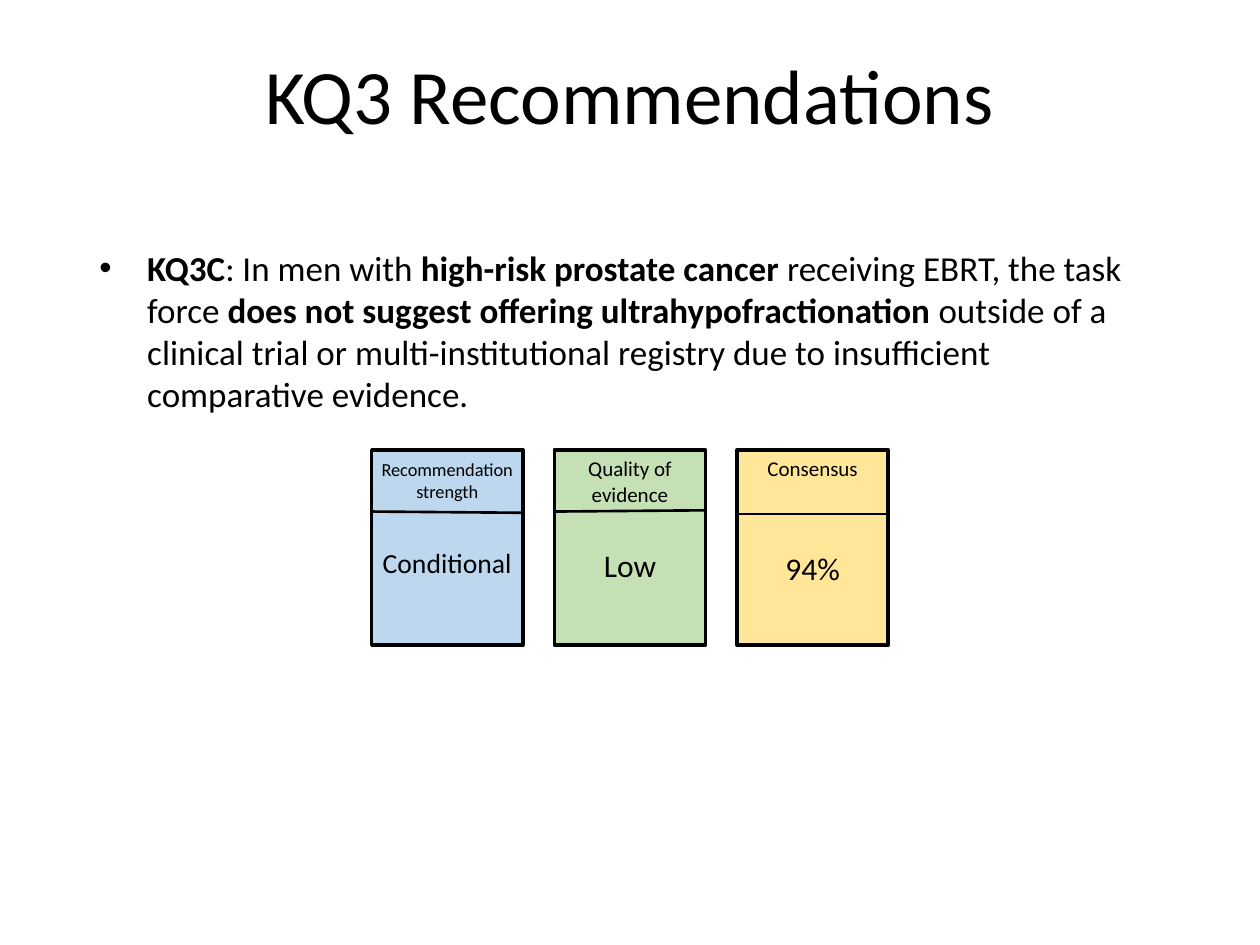
"""Build the KQ3 recommendations slide with its three rating cards."""
import pptx
import pptx.dml.color
import pptx.enum.shapes
import pptx.enum.text
import pptx.oxml.ns
import pptx.util
from lxml import etree

Inches = pptx.util.Inches
Pt = pptx.util.Pt
qn = pptx.oxml.ns.qn
CENTER = pptx.enum.text.PP_ALIGN.CENTER
LEFT = pptx.enum.text.PP_ALIGN.LEFT
COLORS = {"text": "000000", "strength": "BDD7EE", "quality": "C5E0B4", "consensus": "FFE699"}


def rgb(name):
    return pptx.dml.color.RGBColor.from_string(COLORS[name])


def add_text(s, box, runs, size, align=CENTER, insets=(0.1, 0.05, 0.1, 0.05)):
    tf = s.shapes.add_textbox(*[Inches(v) for v in box]).text_frame
    sides = [Inches(v) for v in insets]
    frame_format = {
        "word_wrap": True,
        "vertical_anchor": pptx.enum.text.MSO_ANCHOR.TOP,
        "margin_left": sides[0],
        "margin_top": sides[1],
        "margin_right": sides[2],
        "margin_bottom": sides[3],
    }
    for name, value in frame_format.items():
        setattr(tf, name, value)
    p = tf.paragraphs[0]
    p.alignment = align
    for text, bold in runs:
        r = p.add_run()
        r.text = text
        for name, value in {"name": "Calibri", "size": Pt(size), "bold": bold}.items():
            setattr(r.font, name, value)
        r.font.color.rgb = rgb("text")
    return p


prs = pptx.Presentation()
prs.slide_width, prs.slide_height = Inches(10), Inches(7.5)
s = prs.slides.add_slide(prs.slide_layouts[6])

add_text(s, (0.5, 0.3, 9, 1.25), [("KQ3 Recommendations", False)], 44, insets=(0.1, 0.08, 0.1, 0.05))

recommendation = [
    ("KQ3C", True),
    (": In men with ", False),
    ("high-risk prostate cancer ", True),
    ("receiving EBRT, the task force ", False),
    ("does not suggest offering ultrahypofractionation ", True),
    ("outside of a clinical trial or multi-institutional registry due to insufficient "
     "comparative evidence.", False),
]
p = add_text(s, (0.69, 1.91, 8.62, 1.89), recommendation, 20, LEFT)
pPr = p._p.get_or_add_pPr()
pPr.set("marL", str(Inches(0.38)))
pPr.set("indent", str(-Inches(0.38)))
etree.SubElement(pPr, qn("a:buFont")).set("typeface", "Arial")
etree.SubElement(pPr, qn("a:buChar")).set("char", "•")

card_left, card_top, card_width, card_height, card_pitch = 2.95, 3.57, 1.2, 1.55, 1.45
narrow = (0.04, 0.07, 0.04, 0.07)
normal = (0.1, 0.05, 0.1, 0.05)
cards = [
    ("strength", "Recommendation strength", 10.5, narrow, 0.5, "Conditional", 15.8, 4.05, 4.06, 4.07),
    ("quality", "Quality of evidence", 12, normal, 0.5, "Low", 18, 4.05, 4.06, 4.05),
    ("consensus", "Consensus", 12, normal, 0.3, "94%", 18, 4.08, 4.08, 4.08),
]
for i, card in enumerate(cards):
    fill, label, label_size, insets, label_height, rating, rating_size, rating_top, y1, y2 = card
    x = card_left + i * card_pitch
    sp = s.shapes.add_shape(
        pptx.enum.shapes.MSO_SHAPE.RECTANGLE,
        Inches(x), Inches(card_top), Inches(card_width), Inches(card_height))
    sp.shadow.inherit = False
    sp.fill.solid()
    sp.fill.fore_color.rgb = rgb(fill)
    sp.line.color.rgb = rgb("text")
    sp.line.width = Pt(2)

    divider = s.shapes.add_connector(
        pptx.enum.shapes.MSO_CONNECTOR.STRAIGHT,
        Inches(x), Inches(y1), Inches(x + card_width), Inches(y2))
    divider.line.color.rgb = rgb("text")
    divider.line.width = Pt(1.5)
    etree.SubElement(divider._element.spPr, qn("a:effectLst"))

    add_text(s, (x, card_top, card_width, label_height), [(label, False)], label_size, insets=insets)
    add_text(s, (x, rating_top, card_width, 0.63), [(rating, False)], rating_size,
             insets=(0.04, 0.28, 0.04, 0.05))

prs.save("out.pptx")
